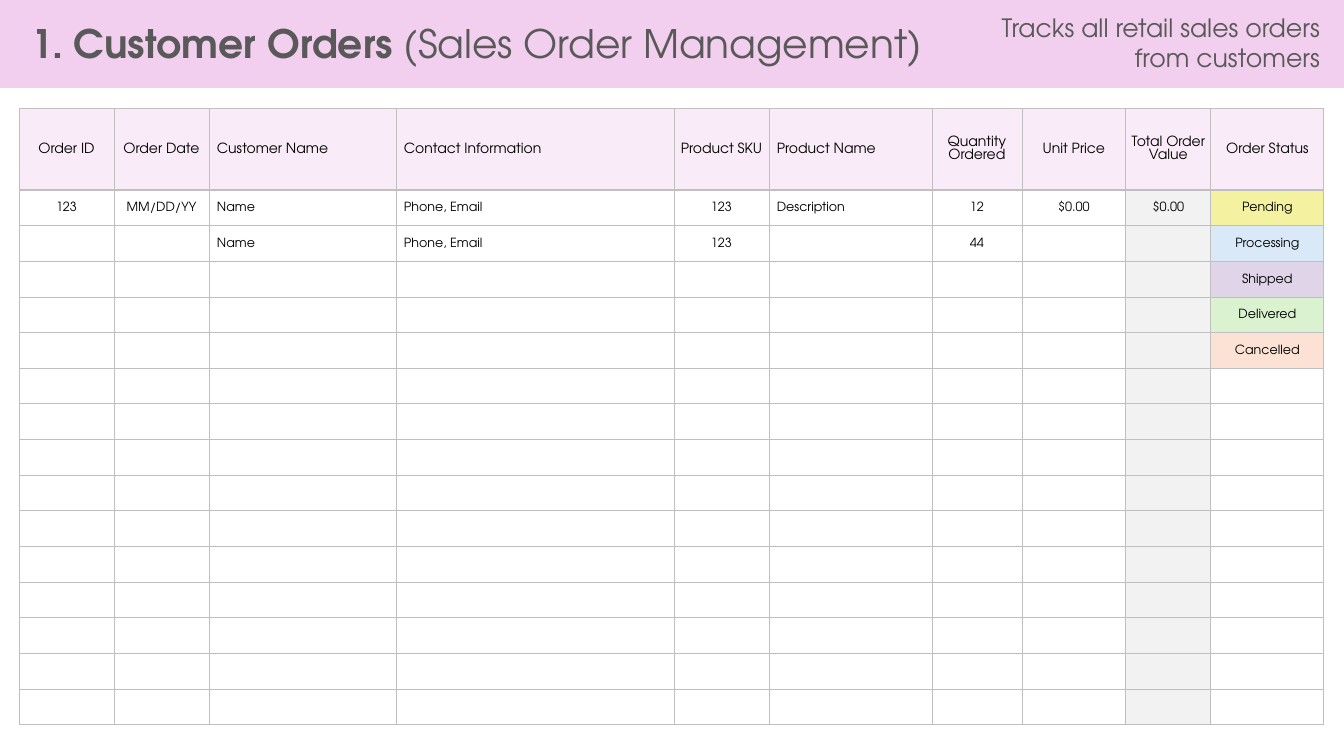
from lxml import etree
from pptx import Presentation
from pptx import util as u
from pptx.dml.color import RGBColor
from pptx.enum import shapes, text
from pptx.oxml import ns

PX = 914400 / 100.8
FONT = "TeX Gyre Adventor"
COLORS = {
    "banner": "F2CFEE", "heading": "595959", "header": "F9EBF7",
    "border": "BFBFBF", "body": "FFFFFF", "total": "F2F2F2", "ink": "000000",
    "Pending": "F4F2A0", "Processing": "DAE9F8", "Shipped": "E0D4E8",
    "Delivered": "DAF2D0", "Cancelled": "FBE2D5",
}
TITLE = [("1. Customer Orders ", True), ("(Sales Order Management)", False)]
SUBTITLE = [("Tracks all retail sales orders from customers", False)]
COLUMNS = [
    ("Order ID", 95), ("Order Date", 95), ("Customer Name", 187),
    ("Contact Information", 278), ("Product SKU", 95), ("Product Name", 163),
    ("Quantity Ordered", 90), ("Unit Price", 104), ("Total Order Value", 85),
    ("Order Status", 113),
]
LEFT_ALIGNED = {"Customer Name", "Contact Information", "Product Name"}
ORDERS = [
    ("123", "MM/DD/YY", "Name", "Phone, Email", "123", "Description",
     "12", "$0.00", "$0.00", "Pending"),
    ("", "", "Name", "Phone, Email", "123", "", "44", "", "", "Processing"),
    *[("",) * 9 + (status,) for status in ("Shipped", "Delivered", "Cancelled")],
]
ORDER_ROWS = 15
TABLE_LEFT, TABLE_TOP, HEADER_HEIGHT, BODY_HEIGHT = 19, 108, 82, 535


def px(length):
    return u.Emu(round(length * PX))


def color(name):
    return RGBColor.from_string(COLORS[name])


def add_run(paragraph, words, size, ink, bold=False):
    run = paragraph.add_run()
    run.text = words
    run.font.name = FONT
    run.font.size = u.Pt(size)
    run.font.bold = bold
    run.font.color.rgb = color(ink)


def add_heading(slide, box, runs, size, align):
    frame = slide.shapes.add_textbox(*map(px, box)).text_frame
    frame.word_wrap = True
    frame.auto_size = text.MSO_AUTO_SIZE.SHAPE_TO_FIT_TEXT
    paragraph = frame.paragraphs[0]
    paragraph.alignment = align
    for words, bold in runs:
        add_run(paragraph, words, size, "heading", bold)


def add_border(cell, side, points):
    line = etree.SubElement(cell._tc.get_or_add_tcPr(), ns.qn(f"a:ln{side}"),
                            w=str(u.Pt(points)))
    fill = etree.SubElement(line, ns.qn("a:solidFill"))
    etree.SubElement(fill, ns.qn("a:srgbClr"), val=COLORS["border"])


def fill_cell(cell, row, heading, words):
    is_header = row == 0
    thick_side = {0: "B", 1: "T"}.get(row)
    for side in "LRTB":
        add_border(cell, side, 1.5 if side == thick_side else 0.5)
    if is_header:
        shade = "header"
    elif heading == "Total Order Value":
        shade = "total"
    else:
        shade = words if words in COLORS else "body"
    cell.fill.solid()
    cell.fill.fore_color.rgb = color(shade)

    is_left = heading in LEFT_ALIGNED
    cell.vertical_anchor = text.MSO_ANCHOR.MIDDLE
    cell.margin_left = px(8 if is_left else 1)
    cell.margin_right = cell.margin_top = px(1)
    cell.margin_bottom = 0
    if words:
        paragraph = cell.text_frame.paragraphs[0]
        paragraph.alignment = text.PP_ALIGN.LEFT if is_left else text.PP_ALIGN.CENTER
        add_run(paragraph, words, 10 if is_header else 9, "ink")


def add_orders(slide):
    headings, widths = zip(*COLUMNS)
    blank_orders = [("",) * len(COLUMNS)] * (ORDER_ROWS - len(ORDERS))
    rows = [headings, *ORDERS, *blank_orders]
    orders = slide.shapes.add_table(
        len(rows), len(COLUMNS), px(TABLE_LEFT), px(TABLE_TOP),
        px(sum(widths)), px(HEADER_HEIGHT + BODY_HEIGHT)).table
    orders.first_row = orders.horz_banding = False
    for column, width in zip(orders.columns, widths):
        column.width = px(width)
    for row, values in enumerate(rows):
        orders.rows[row].height = px(BODY_HEIGHT / ORDER_ROWS if row else HEADER_HEIGHT)
        for cell, heading, words in zip(orders.rows[row].cells, headings, values):
            fill_cell(cell, row, heading, words)


def main():
    deck = Presentation()
    deck.slide_width, deck.slide_height = px(1344), px(756)
    slide = deck.slides.add_slide(deck.slide_layouts[6])

    banner = slide.shapes.add_shape(
        shapes.MSO_SHAPE.RECTANGLE, 0, 0, deck.slide_width, px(88))
    banner.shadow.inherit = False
    banner.fill.solid()
    banner.fill.fore_color.rgb = color("banner")
    banner.line.fill.background()

    add_heading(slide, (22, 14, 940, 58), TITLE, 28, text.PP_ALIGN.LEFT)
    add_heading(slide, (989, 7, 341, 71), SUBTITLE, 18, text.PP_ALIGN.RIGHT)
    add_orders(slide)
    deck.save("out.pptx")


if __name__ == "__main__":
    main()
